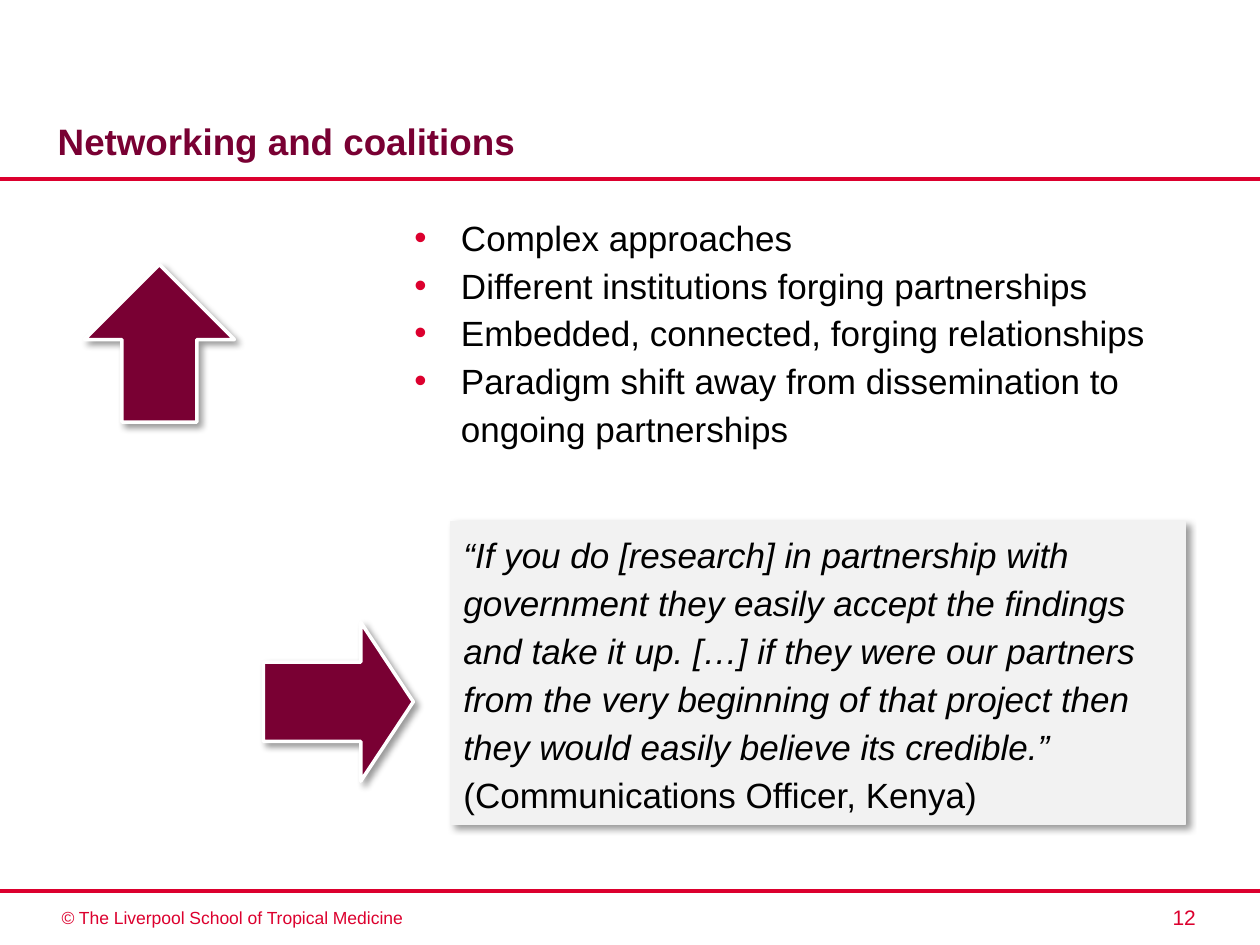
from lxml.etree import SubElement
from pptx import Presentation
from pptx.dml.color import RGBColor
from pptx.enum.shapes import MSO_CONNECTOR, MSO_SHAPE
from pptx.enum.text import MSO_ANCHOR, PP_ALIGN
from pptx.oxml.ns import qn
from pptx.util import Inches, Pt

RED = "DC002E"
MAROON = "790033"
BLACK = "000000"
WHITE = "FFFFFF"
PALE = "F2F2F2"


def color(hex_value):
    return RGBColor.from_string(hex_value)


def inches(box):
    return [Inches(length) for length in box]


def add_run(paragraph, text, size, hex_value, bold=False, italic=False):
    run = paragraph.add_run()
    run.text = text
    font = run.font
    font.name = "Arial"
    font.size = Pt(size)
    font.bold = bold
    font.italic = italic
    font.color.rgb = color(hex_value)


def add_frame(slide, box, anchor=MSO_ANCHOR.TOP):
    frame = slide.shapes.add_textbox(*inches(box)).text_frame
    frame.word_wrap = True
    frame.vertical_anchor = anchor
    return frame


def next_paragraph(frame, index):
    paragraph = frame.add_paragraph() if index else frame.paragraphs[0]
    paragraph.line_spacing = 1.14
    return paragraph


def add_rule(slide, y):
    rule = slide.shapes.add_connector(
        MSO_CONNECTOR.STRAIGHT, *inches((0, y, 10, y)))
    rule.line.color.rgb = color(RED)
    rule.line.width = Pt(2.25)
    SubElement(rule._element.spPr, qn("a:effectLst"))


def add_raised_shape(slide, preset, box, fill, outline, width):
    raised = slide.shapes.add_shape(preset, *inches(box))
    raised.fill.solid()
    raised.fill.fore_color.rgb = color(fill)
    raised.line.color.rgb = color(outline)
    raised.line.width = Pt(width)
    raised.shadow.inherit = False
    effects = raised._element.spPr.find(qn("a:effectLst"))
    shadow = SubElement(effects, qn("a:outerShdw"), blurRad=str(Pt(4)),
                        dist=str(Pt(3)), dir="2700000", algn="tl",
                        rotWithShape="0")
    tint = SubElement(shadow, qn("a:srgbClr"), val=BLACK)
    SubElement(tint, qn("a:alpha"), val="40000")
    return raised


def add_title(slide, box):
    title = add_frame(slide, box, MSO_ANCHOR.BOTTOM)
    add_run(title.paragraphs[0], "Networking and coalitions", 21, MAROON, bold=True)


def add_footer(slide, box):
    left, top, width, height = box
    copyright_line = add_frame(slide, (left, top + 0.02, 3.95, 0.27))
    add_run(copyright_line.paragraphs[0],
            "© The Liverpool School of Tropical Medicine", 10, RED)
    number_width = 1.83
    page_number = add_frame(
        slide, (left + width - number_width, top, number_width, height))
    page_number.paragraphs[0].alignment = PP_ALIGN.RIGHT
    add_run(page_number.paragraphs[0], "12", 12, RED)


def add_approaches(slide, box, approaches):
    frame = add_frame(slide, box)
    for index, approach in enumerate(approaches):
        paragraph = next_paragraph(frame, index)
        properties = paragraph._p.get_or_add_pPr()
        properties.set("marL", str(Inches(0.37)))
        properties.set("indent", str(Inches(-0.37)))
        bullet_color = SubElement(properties, qn("a:buClr"))
        SubElement(bullet_color, qn("a:srgbClr"), val=RED)
        SubElement(properties, qn("a:buFont"), typeface="Arial")
        SubElement(properties, qn("a:buChar"), char="•")
        add_run(paragraph, approach, 20, BLACK)


def add_quote(slide, box, quote, speaker):
    panel = add_raised_shape(slide, MSO_SHAPE.RECTANGLE, box, PALE, PALE, 0.75)
    frame = panel.text_frame
    frame.word_wrap = True
    frame.vertical_anchor = MSO_ANCHOR.TOP
    for index, (text, italic) in enumerate([(quote, True), (speaker, False)]):
        paragraph = next_paragraph(frame, index)
        paragraph.alignment = PP_ALIGN.LEFT
        add_run(paragraph, text, 20, BLACK, italic=italic)


def add_arrow(slide, preset, box, head):
    arrow = add_raised_shape(slide, preset, box, MAROON, WHITE, 2)
    arrow.adjustments[0] = 0.5
    arrow.adjustments[1] = head


def main():
    presentation = Presentation()
    presentation.slide_width = Inches(10)
    presentation.slide_height = Inches(7.5)
    slide = presentation.slides.add_slide(presentation.slide_layouts[6])

    add_footer(slide, (0.39, 7.13, 9.2, 0.3))
    for y in (1.42, 7.07):
        add_rule(slide, y)
    add_title(slide, (0.36, 0.67, 7.08, 0.67))
    add_arrow(slide, MSO_SHAPE.RIGHT_ARROW, (2.09, 4.94, 1.19, 1.26), 0.35)
    add_arrow(slide, MSO_SHAPE.UP_ARROW, (0.67, 2.1, 1.19, 1.25), 0.5)
    add_approaches(slide, (3.19, 1.62, 6.38, 2.36), [
        "Complex approaches",
        "Different institutions forging partnerships",
        "Embedded, connected, forging relationships",
        "Paradigm shift away from dissemination to ongoing partnerships",
    ])
    add_quote(
        slide, (3.58, 4.14, 5.83, 2.4),
        "“If you do [research] in partnership with government they easily "
        "accept the findings and take it up. […] if they were our partners "
        "from the very beginning of that project then they would easily "
        "believe its credible.”",
        "(Communications Officer, Kenya)")

    presentation.save("out.pptx")


if __name__ == "__main__":
    main()
